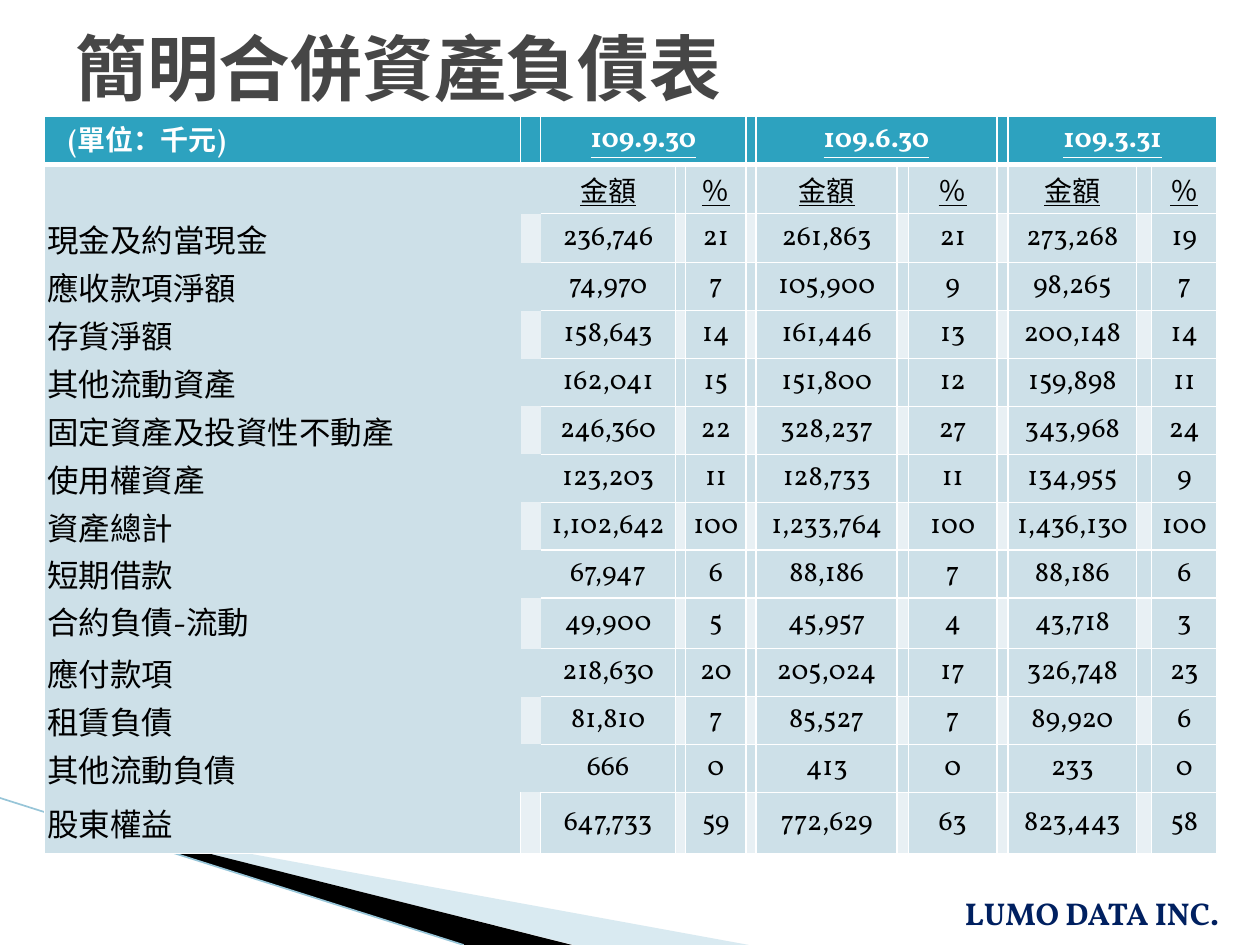
from dataclasses import dataclass

from lxml import etree
from pptx import Presentation
from pptx.dml.color import RGBColor
from pptx.enum.shapes import MSO_CONNECTOR
from pptx.enum.text import MSO_ANCHOR, PP_ALIGN
from pptx.oxml.ns import qn
from pptx.util import Pt

STRAIGHT = MSO_CONNECTOR.STRAIGHT
TOP, MIDDLE = MSO_ANCHOR.TOP, MSO_ANCHOR.MIDDLE
LEFT, CENTER = PP_ALIGN.LEFT, PP_ALIGN.CENTER


@dataclass(frozen=True)
class Theme:
    """Colours, fonts and type sizes of the deck."""
    header: str = "2DA2BF"
    band: str = "CDE0E8"
    gap: str = "E8F0F4"
    white: str = "FFFFFF"
    black: str = "000000"
    title: str = "464646"
    company: str = "002060"
    wedge: str = "A0CBDC"
    edge: str = "97C5D8"
    serif: str = "Vollkorn"
    sans: str = "Noto Sans CJK SC"
    title_size: float = 41
    label_size: float = 18
    value_size: float = 16


@dataclass(frozen=True)
class Box:
    """A rectangle on the page, in points."""
    left: float
    top: float
    width: float
    height: float

    def emu(self):
        """Return the four lengths for a python-pptx call."""
        return Pt(self.left), Pt(self.top), Pt(self.width), Pt(self.height)


THEME = Theme()
COLUMNS = [272, 11.5, 77, 5.8, 34.6, 5.8, 80.6, 6.5, 50.4, 6.5, 73.4, 8.6, 37.4]
ROWS = [28] * 3 + [27.4] * 7 + [28.6] + [27.4] * 3 + [34.9]
VALUE_COLUMNS = range(2, 13, 2)
DATES = {2: "109.9.30", 6: "109.6.30", 10: "109.3.31"}
UNIT = "(單位：千元)"
ITEMS = [
    ("現金及約當現金", "236,746", "21", "261,863", "21", "273,268", "19"),
    ("應收款項淨額", "74,970", "7", "105,900", "9", "98,265", "7"),
    ("存貨淨額", "158,643", "14", "161,446", "13", "200,148", "14"),
    ("其他流動資產", "162,041", "15", "151,800", "12", "159,898", "11"),
    ("固定資產及投資性不動產", "246,360", "22", "328,237", "27", "343,968", "24"),
    ("使用權資產", "123,203", "11", "128,733", "11", "134,955", "9"),
    ("資產總計", "1,102,642", "100", "1,233,764", "100", "1,436,130", "100"),
    ("短期借款", "67,947", "6", "88,186", "7", "88,186", "6"),
    ("合約負債-流動", "49,900", "5", "45,957", "4", "43,718", "3"),
    ("應付款項", "218,630", "20", "205,024", "17", "326,748", "23"),
    ("租賃負債", "81,810", "7", "85,527", "7", "89,920", "6"),
    ("其他流動負債", "666", "0", "413", "0", "233", "0"),
    ("股東權益", "647,733", "59", "772,629", "63", "823,443", "58"),
]


def write(frame, text, size, color, font=THEME.serif, align=LEFT, bold=False, underline=False):
    """Put one formatted line of text into a text frame."""
    frame.text = text
    para = frame.paragraphs[0]
    para.alignment = align
    for span in para.runs:
        span.font.size = Pt(size)
        span.font.name = font
        span.font.bold = bold
        span.font.underline = underline
        span.font.color.rgb = RGBColor.from_string(color)
        etree.SubElement(span.font._element, qn("a:ea"), typeface=THEME.sans)


def add_label(page, box, text, size, color, font, wrap):
    """Add a bold text box."""
    frame = page.shapes.add_textbox(*box.emu()).text_frame
    frame.word_wrap = wrap
    frame.vertical_anchor = TOP
    write(frame, text, size, color, font, bold=True)


def add_wedge(page, box, points, color, alpha=100):
    """Add a filled polygon whose points are relative to the box."""
    corners = [(Pt(box.left + x), Pt(box.top + y)) for x, y in points]
    builder = page.shapes.build_freeform(*corners[0])
    builder.add_line_segments(corners[1:], close=True)
    shape = builder.convert_to_shape()
    shape.shadow.inherit = False
    shape.line.fill.background()
    shape.fill.solid()
    shape.fill.fore_color.rgb = RGBColor.from_string(color)
    tint = shape._element.spPr.find(qn("a:solidFill"))[0]
    etree.SubElement(tint, qn("a:alpha"), val=str(alpha * 1000))


def add_swoosh(page, box):
    """Add the wedges and thin line in the lower left corner."""
    add_wedge(page, box, [(39.6, 13), (428, 84), (328, 84), (39.6, 12)], THEME.wedge, 40)
    add_wedge(page, box, [(38.2, 11.3), (327, 84), (265, 84), (38.9, 12)], THEME.black)
    line = page.shapes.add_connector(
        STRAIGHT, Pt(box.left), Pt(box.top), Pt(box.left + 265), Pt(box.top + 84))
    line.line.width = Pt(0.95)
    line.line.color.rgb = RGBColor.from_string(THEME.edge)
    etree.SubElement(line._element.spPr, qn("a:effectLst"))


def border_widths(row, column):
    """Return the left, right, top and bottom line widths of a cell."""
    last = len(ROWS) - 1
    if row == 0:
        return 1, 1, 1, 3
    top = 3 if row == 1 else 1
    if column > 1:
        return (0 if column == 2 and row < last else 1), 1, top, 1
    if row == last:
        return 1, 1, 0, 1
    return 0, 0, (3 if row == 1 else 0), 0


def paint_cell(cell, color, widths):
    """Set fill, margins and borders of a cell."""
    cell.fill.solid()
    cell.fill.fore_color.rgb = RGBColor.from_string(color)
    cell.margin_left = cell.margin_right = Pt(1.5)
    cell.margin_top = cell.margin_bottom = 0
    cell.vertical_anchor = MIDDLE
    properties = cell._tc.get_or_add_tcPr()
    for index, (side, width) in enumerate(zip("LRTB", widths)):
        line = etree.Element(qn(f"a:ln{side}"), w=str(Pt(width)))
        if width:
            solid = etree.SubElement(line, qn("a:solidFill"))
            etree.SubElement(solid, qn("a:srgbClr"), val=THEME.white)
        else:
            etree.SubElement(line, qn("a:noFill"))
        properties.insert(index, line)


def cell_color(row, column):
    """Return the fill of a cell; gap columns are paler in every other row."""
    if row == 0:
        return THEME.header
    paler = column % 2 == 1 and row % 2 == 0
    return THEME.gap if paler else THEME.band


def add_balance_sheet(page, box):
    """Add the balance sheet table."""
    table = page.shapes.add_table(len(ROWS), len(COLUMNS), *box.emu()).table
    table.first_row = table.horz_banding = False
    for column, width in zip(table.columns, COLUMNS):
        column.width = Pt(width)
    for row, height in zip(table.rows, ROWS):
        row.height = Pt(height)
    for row in range(len(ROWS)):
        for column in range(len(COLUMNS)):
            paint_cell(table.cell(row, column), cell_color(row, column), border_widths(row, column))

    unit = table.cell(0, 0).text_frame
    write(unit, UNIT, THEME.value_size, THEME.white, bold=True)
    unit.paragraphs[0]._p.get_or_add_pPr().set("indent", str(Pt(12)))
    for column, date in DATES.items():
        table.cell(0, column).merge(table.cell(0, column + 2))
        write(table.cell(0, column).text_frame, date, THEME.value_size, THEME.white,
              align=CENTER, bold=True, underline=True)
    for index, column in enumerate(VALUE_COLUMNS):
        write(table.cell(1, column).text_frame, ("金額", "％")[index % 2], THEME.value_size,
              THEME.black, align=CENTER, underline=True)
    for row, (name, *values) in enumerate(ITEMS, 2):
        write(table.cell(row, 0).text_frame, name, THEME.label_size, THEME.black)
        for column, value in zip(VALUE_COLUMNS, values):
            write(table.cell(row, column).text_frame, value, THEME.value_size,
                  THEME.black, align=CENTER)


def main():
    """Build and save the deck."""
    deck = Presentation()
    deck.slide_width, deck.slide_height = Pt(720), Pt(540)
    page = deck.slides.add_slide(deck.slide_layouts[6])
    add_swoosh(page, Box(0, 456, 428, 84))
    add_balance_sheet(page, Box(25.5, 66.2, sum(COLUMNS), sum(ROWS)))
    add_label(page, Box(544.3, 507.6, 170.6, 28.8), "LUMO DATA INC.",
              THEME.label_size, THEME.company, THEME.serif, False)
    add_label(page, Box(36, 10, 648, 90), "簡明合併資產負債表",
              THEME.title_size, THEME.title, THEME.sans, True)
    deck.save("out.pptx")


if __name__ == "__main__":
    main()
